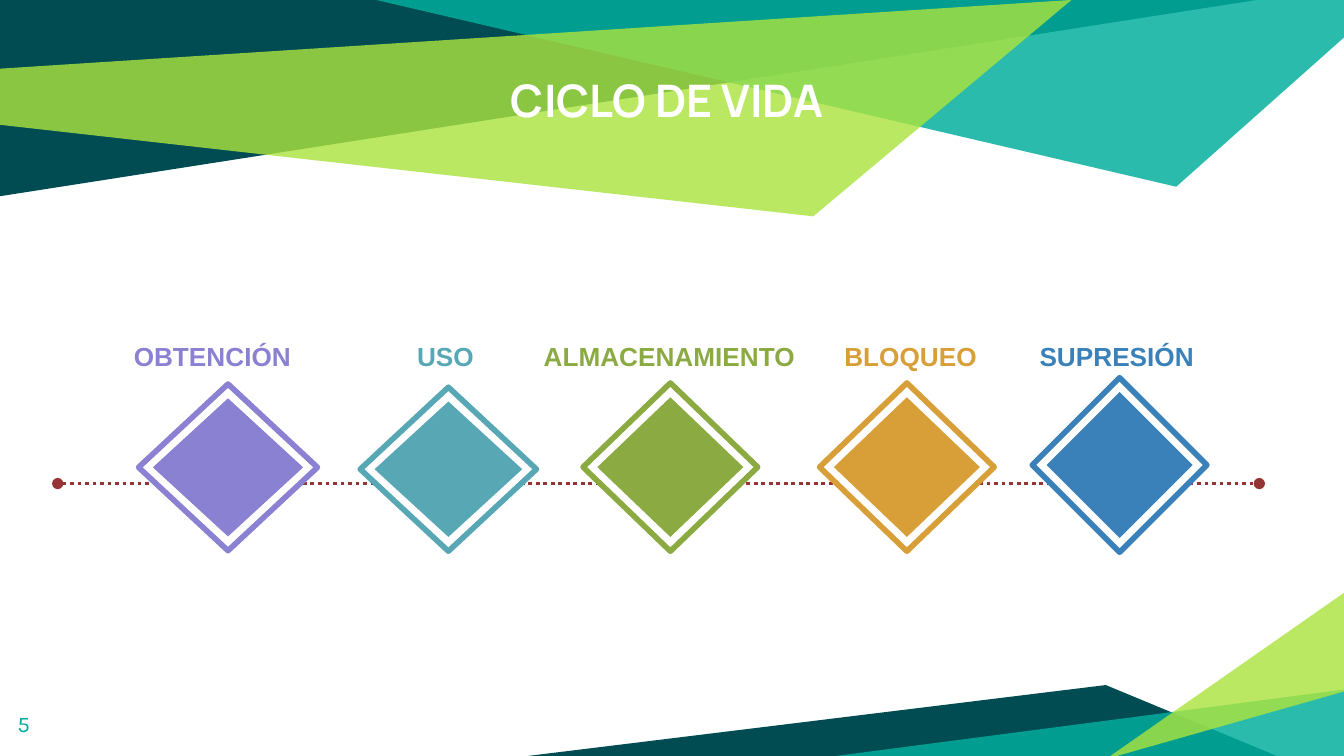
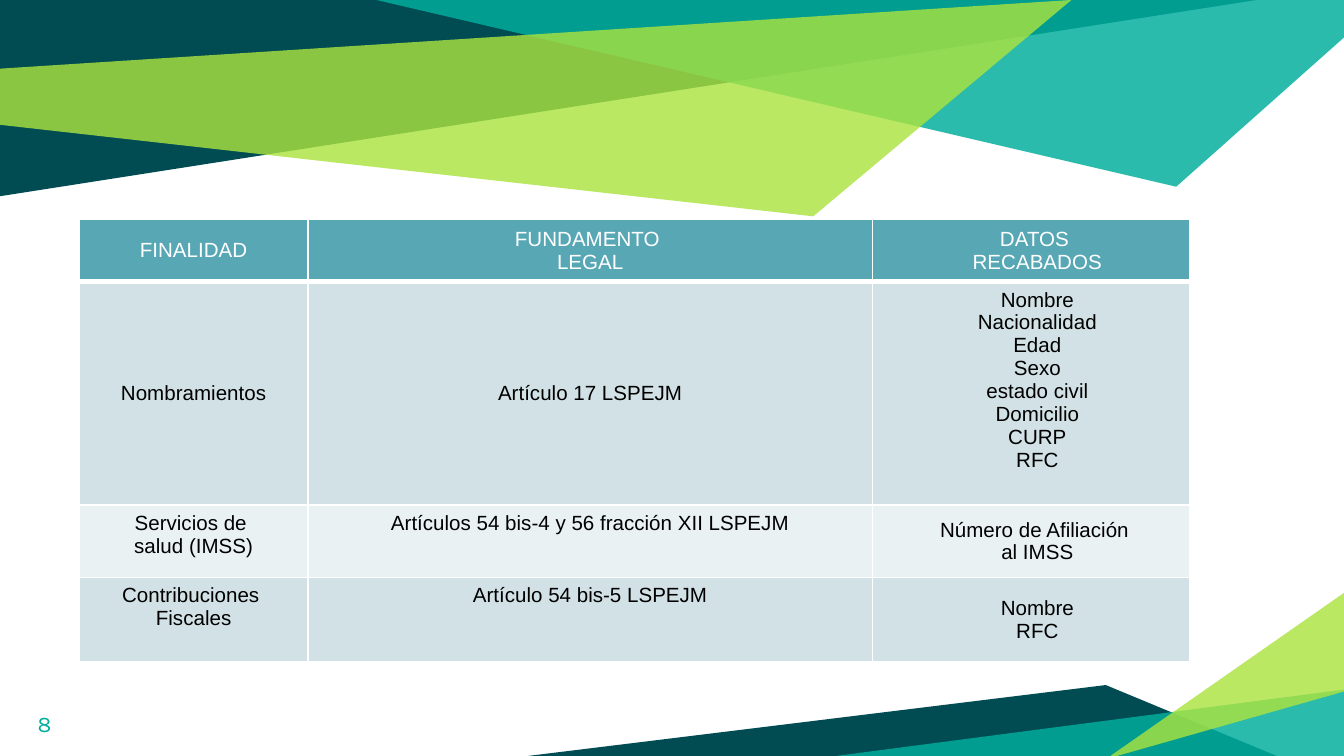
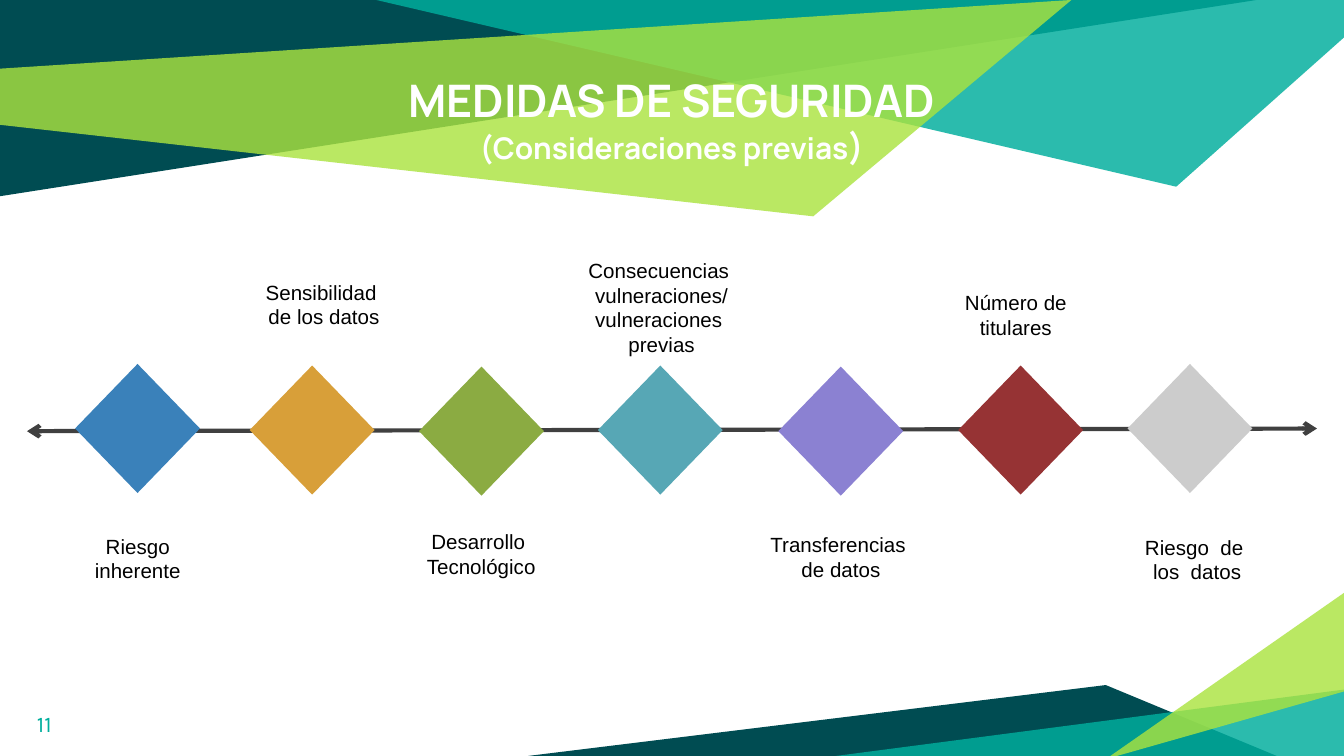
from copy import deepcopy

from lxml.etree import SubElement
from pptx import Presentation
from pptx.dml.color import RGBColor
from pptx.enum.dml import MSO_LINE as Dash
from pptx.enum.shapes import MSO_CONNECTOR as Link, MSO_SHAPE as Form
from pptx.enum.text import MSO_ANCHOR as Anchor, MSO_AUTO_SIZE as Fit, PP_ALIGN as Align
from pptx.oxml.ns import qn
from pptx.util import Cm, Pt

HEX = {
    "white": "FFFFFF", "black": "000000", "dark": "004C52", "teal": "00AE9D",
    "lime": "ABE33F", "violet": "8B81D2", "aqua": "57A7B5", "green": "8BAB42",
    "gold": "D89F39", "blue": "3A81BA", "red": "963334", "grey": "CCCCCC",
    "ink": "404040", "pale": "D1E1E5", "light": "EAF1F3",
}
BANDS = [
    ("dark", 100, [(0, 0), (0, 3.71), (23.75, 0)]),
    ("teal", 83, [(7.11, 0), (22.23, 3.53), (25.4, 0.71), (25.4, 0)]),
    ("lime", 81, [(-0.02, 1.3), (0, 2.36), (15.37, 4.09), (20.25, 0)]),
    ("dark", 100, [(9.98, 14.29), (24.13, 14.29), (20.9, 12.95)]),
    ("teal", 83, [(25.44, 13.03), (25.44, 14.35), (15.34, 14.35)]),
    ("lime", 81, [(25.44, 13.06), (25.44, 11.18), (20.9, 14.35)]),
]
HEAD = (2.46, 1.12, 20.47, 2.39)
PAGE = (0.08, 13.18, 1.52, 1.09)
PAD = 0.25

STAGES = [
    ("OBTENCIÓN", "violet", (2.62, 7.26, 3.38, 3.15), (2.11, 3.81)),
    ("USO", "aqua", (6.81, 7.32, 3.33, 3.1), (7.29, 2.26)),
    ("ALMACENAMIENTO", "green", (11.02, 7.24, 3.3, 3.18), (10.01, 5.28)),
    ("BLOQUEO", "gold", (15.49, 7.24, 3.3, 3.18), (15.32, 3.78)),
    ("SUPRESIÓN", "blue", (19.51, 7.14, 3.3, 3.3), (19.1, 4.01)),
]
ROWS = [
    (0.97, "aqua", [["FINALIDAD"], ["FUNDAMENTO ", "LEGAL"], ["DATOS ", "RECABADOS"]]),
    (4.22, "pale", [["Nombramientos"], ["Artículo 17 LSPEJM"],
                    ["Nombre", "Nacionalidad", "Edad", "Sexo", "estado civil",
                     "Domicilio", "CURP", "RFC"]]),
    (1.37, "light", [["Servicios de ", "salud (IMSS)"],
                     ["Artículos 54 bis-4 y 56 fracción XII LSPEJM"],
                     ["Número de Afiliación ", "al IMSS"]]),
    (1.6, "pale", [["Contribuciones ", "Fiscales"], ["Artículo 54 bis-5 LSPEJM"],
                   ["Nombre", "RFC"]]),
]
RISKS = [
    ("blue", (1.42, 6.88), (0.89, 9.96, 3.43, 1.19), ["Riesgo", "inherente"]),
    ("gold", (4.72, 6.91), (4.32, 5.16, 3.61, 1.19), ["Sensibilidad ", "de los datos"]),
    ("green", (7.92, 6.93), (7.47, 9.88, 3.25, 1.19), ["Desarrollo ", "Tecnológico"]),
    ("aqua", (11.3, 6.91), (10.31, 4.75, 4.39, 2.13),
     ["Consecuencias ", "vulneraciones/ vulneraciones ", "previas"]),
    ("violet", (14.71, 6.93), (13.89, 9.93, 4.01, 1.19), ["Transferencias ", "de datos"]),
    ("red", (18.11, 6.91), (17.5, 5.36, 3.4, 1.19), ["Número de titulares"]),
    ("grey", (21.31, 6.88), (20.9, 9.98, 3.45, 1.19), ["Riesgo  de ", "los  datos"]),
]


def rgb(name):
    """Return the named colour."""
    return RGBColor.from_string(HEX[name])


def cms(box):
    """Turn numbers into centimetre lengths."""
    return [Cm(n) for n in box]


def style(font, name, size, tint, bold=False):
    """Format one font."""
    font.name, font.size, font.bold = name, Pt(size), bold
    font.color.rgb = rgb(tint)


def write(frame, lines, name, size, tint, bold=False, align=Align.CENTER):
    """Fill a text frame with one paragraph per line."""
    frame.text = "\n".join(lines)
    for par in frame.paragraphs:
        par.alignment = align
        for run in par.runs:
            style(run.font, name, size, tint, bold)


def pad(frame):
    """Give a text frame equal insets."""
    frame.margin_left = frame.margin_right = Cm(PAD)
    frame.margin_top = frame.margin_bottom = Cm(PAD)


def label(slide, box, lines, size, tint="black", bold=False, anchor=Anchor.TOP):
    """Add a centred caption that grows with its text."""
    frame = slide.shapes.add_textbox(*cms(box)).text_frame
    frame.word_wrap, frame.auto_size = True, Fit.SHAPE_TO_FIT_TEXT
    frame.vertical_anchor = anchor
    write(frame, lines, "Arial", size, tint, bold)


def page(slide, num, align=Align.CENTER):
    """Add the page number."""
    frame = slide.shapes.add_textbox(*cms(PAGE)).text_frame
    frame.word_wrap = True
    pad(frame)
    write(frame, [num], "Karla", 12, "teal", align=align)


def head(slide, *lines):
    """Place the title; each line is a list of text and size pairs."""
    title = slide.shapes.title
    title.left, title.top, title.width, title.height = cms(HEAD)
    frame = title.text_frame
    frame.word_wrap, frame.auto_size = True, Fit.NONE
    frame.vertical_anchor = Anchor.TOP
    pad(frame)
    par = frame.paragraphs[0]
    par.alignment = Align.CENTER
    for at, line in enumerate(lines):
        if at:
            par.add_line_break()
        for text, size in line:
            run = par.add_run()
            run.text = text
            style(run.font, "Manrope", size, "white", True)
    for gap in par._p.findall(qn("a:br")):
        gap.append(deepcopy(par.runs[0].font._element))


def bands(prs, slide):
    """Draw the coloured bands and set them on the slide master."""
    tree = prs.slide_master.element.cSld.spTree
    for at, (tint, alpha, pts) in enumerate(BANDS):
        first, *rest = [cms(pt) for pt in pts]
        pen = slide.shapes.build_freeform(*first, scale=1.0)
        pen.add_line_segments(rest, close=True)
        band = pen.convert_to_shape()
        band.shadow.inherit = False
        band.line.fill.background()
        band.fill.solid()
        band.fill.fore_color.rgb = rgb(tint)
        if alpha < 100:
            tone = next(band.element.spPr.iter(qn("a:srgbClr")))
            SubElement(tone, qn("a:alpha"), val=str(alpha * 1000))
        band.element.nvSpPr.cNvPr.set("id", str(100 + at))
        tree.insert(2 + at, band.element)


def axis(slide, ends, tint, width, tip):
    """Draw a line with the same tip at both ends."""
    line = slide.shapes.add_connector(Link.STRAIGHT, *cms(ends))
    line.line.color.rgb, line.line.width = rgb(tint), Pt(width)
    props = line.element.spPr
    for end in ("a:headEnd", "a:tailEnd"):
        SubElement(props.find(qn("a:ln")), qn(end), type=tip)
    SubElement(props, qn("a:effectLst"))
    return line


def gem(shapes, box, tint, edge=None):
    """Add a diamond, with a round-cornered edge if one is named."""
    shape = shapes.add_shape(Form.DIAMOND, *cms(box))
    shape.shadow.inherit = False
    shape.fill.solid()
    shape.fill.fore_color.rgb = rgb(tint)
    if edge:
        shape.line.color.rgb, shape.line.width = rgb(edge), Pt(3)
        SubElement(shape.element.spPr.find(qn("a:ln")), qn("a:round"))
    else:
        shape.line.fill.background()


def stage(slide, box, tint, inset=0.27):
    """Group a framed diamond inside its box."""
    left, top, wide, high = box
    group = slide.shapes.add_group_shape()
    gem(group.shapes, box, "white", tint)
    core = (left + inset, top + inset, wide - 2 * inset, high - 2 * inset)
    gem(group.shapes, core, tint)


def cycle(slide):
    """Build the life cycle slide."""
    line = axis(slide, (1.09, 9.14, 23.8, 9.14), "red", 2, "oval")
    line.line.dash_style = Dash.ROUND_DOT
    head(slide, [("CICLO DE VIDA ", 24)])
    page(slide, "5", Align.LEFT)
    for name, tint, box, (left, wide) in STAGES:
        stage(slide, box, tint)
        label(slide, (left, 6.3, wide, 0.86), [name], 14, tint, True, Anchor.MIDDLE)


def edges(cell, base):
    """Rule a cell in white, with its own bottom width."""
    props = cell._tc.get_or_add_tcPr()
    for side, width in (("L", 1), ("R", 1), ("T", 1), ("B", base)):
        line = SubElement(props, qn("a:ln" + side), w=str(Pt(width)))
        fill = SubElement(line, qn("a:solidFill"))
        SubElement(fill, qn("a:srgbClr"), val=HEX["white"])


def grid(slide, left, top, wides):
    """Build the table of purposes."""
    high = sum(row[0] for row in ROWS)
    box = cms((left, top, sum(wides), high))
    table = slide.shapes.add_table(len(ROWS), len(wides), *box).table
    table.horz_banding = False
    for col, wide in zip(table.columns, wides):
        col.width = Cm(wide)
    for y, (high, tint, texts) in enumerate(ROWS):
        table.rows[y].height = Cm(high)
        for x, lines in enumerate(texts):
            cell = table.cell(y, x)
            edges(cell, 1 if y else 3)
            cell.fill.solid()
            cell.fill.fore_color.rgb = rgb(tint)
            mid = y == 0 or (y == 1) != (x == 2)
            cell.vertical_anchor = Anchor.MIDDLE if mid else Anchor.TOP
            write(cell.text_frame, lines, "Arial", 11, "black" if y else "white")
            if x == 2:
                for par in cell.text_frame.paragraphs:
                    par._p.get_or_add_pPr().set("marL", str(Cm(0.23)))


def risks(slide):
    """Build the security measures slide."""
    head(slide, [("MEDIDAS DE SEGURIDAD", 24)],
         [("(Consideraciones previas", 16), (")", 18)])
    axis(slide, (0.51, 8.15, 24.89, 8.1), "ink", 2.25, "arrow")
    for tint, spot, _, _ in RISKS:
        gem(slide.shapes, (*spot, 2.36, 2.44), tint)
    for _, _, box, lines in RISKS:
        label(slide, box, lines, 11)
    page(slide, "11")


def main():
    """Build and save the deck."""
    prs = Presentation()
    prs.slide_width, prs.slide_height = Cm(25.4), Cm(14.29)
    titled, blank = prs.slide_layouts[5], prs.slide_layouts[6]
    first = prs.slides.add_slide(titled)
    bands(prs, first)
    cycle(first)
    second = prs.slides.add_slide(blank)
    page(second, "8")
    grid(second, 1.5, 4.14, (4.32, 10.67, 6))
    risks(prs.slides.add_slide(titled))
    prs.save("out.pptx")


if __name__ == "__main__":
    main()
